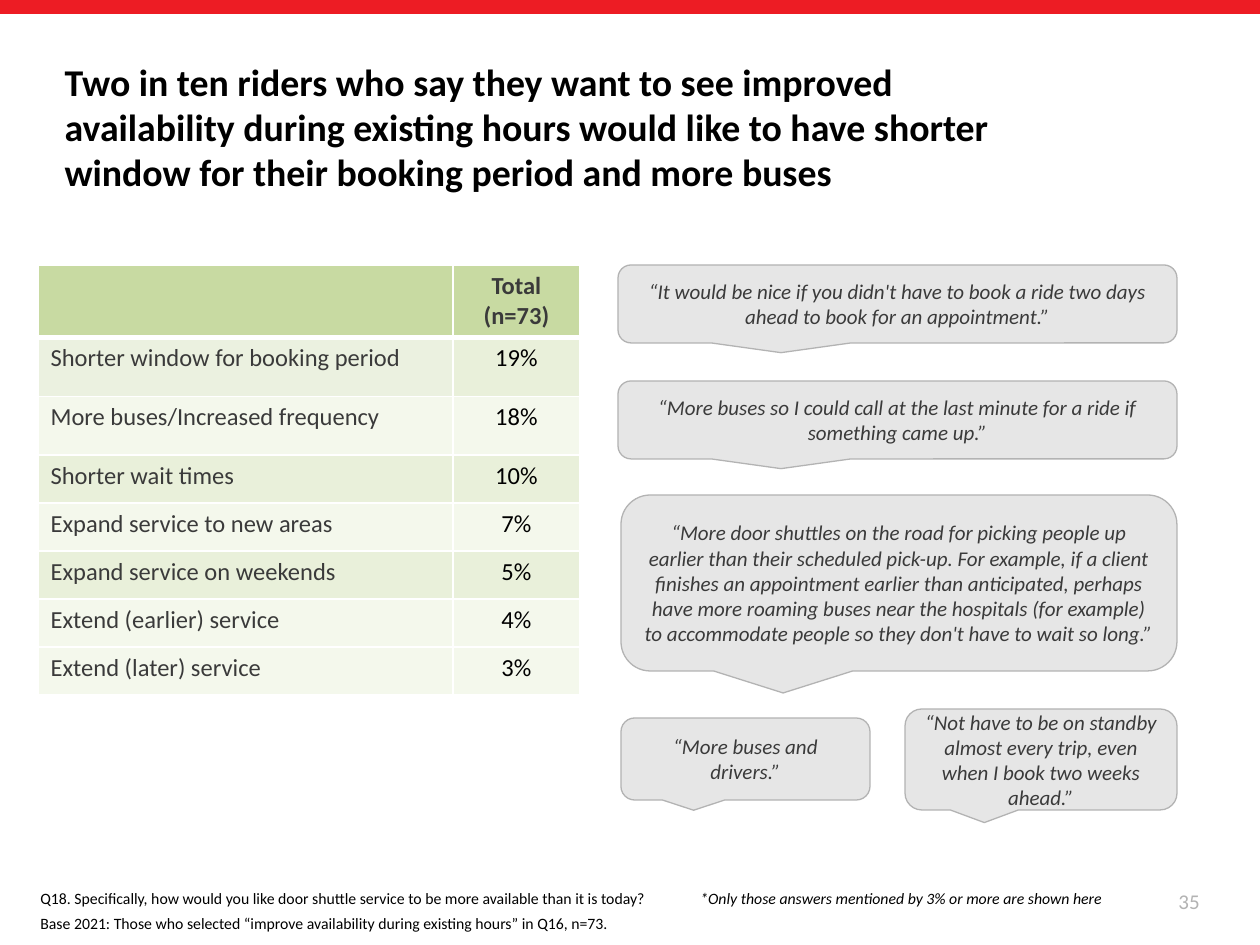
from lxml import etree
from pptx import Presentation
from pptx.dml.color import RGBColor
from pptx.enum.shapes import MSO_SHAPE
from pptx.enum.text import MSO_ANCHOR, MSO_AUTO_SIZE, PP_ALIGN
from pptx.oxml import parse_xml
from pptx.oxml.ns import nsdecls
from pptx.util import Emu, Pt


def px(*values):
    """Turn pixels (126 to the inch) into EMU lengths."""
    return [Emu(round(v * 914400 / 126)) for v in values]


def style(p, size, color, align=PP_ALIGN.LEFT, bold=False, italic=False):
    p.alignment = align
    p.font.name = "Calibri"
    p.font.size = Pt(size)
    p.font.bold = bold
    p.font.italic = italic
    p.font.color.rgb = RGBColor.from_string(color)


prs = Presentation()
prs.slide_width, prs.slide_height = px(1260, 945)
s = prs.slides.add_slide(prs.slide_layouts[5])

# Red band
band = s.shapes.add_shape(MSO_SHAPE.RECTANGLE, *px(0, 0, 1260, 14))
band.shadow.inherit = False
band.fill.solid()
band.fill.fore_color.rgb = RGBColor.from_string("ED1C24")
band.line.fill.background()

# Title
title = s.shapes.title
title.left, title.top, title.width, title.height = px(52, 79, 998, 95)
tf = title.text_frame
tf.text = ("Two in ten riders who say they want to see improved availability during "
           "existing hours would like to have shorter window for their booking period "
           "and more buses")
tf.word_wrap = True
tf.auto_size = MSO_AUTO_SIZE.NONE
tf.vertical_anchor = MSO_ANCHOR.MIDDLE
style(tf.paragraphs[0], 21.6, "000000", bold=True)

# Table of answers
rows = [
    ("", "Total\n(n=73)"),
    ("Shorter window for booking period", "19%"),
    ("More buses/Increased frequency", "18%"),
    ("Shorter wait times", "10%"),
    ("Expand service to new areas", "7%"),
    ("Expand service on weekends", "5%"),
    ("Extend (earlier) service", "4%"),
    ("Extend (later) service", "3%"),
]
heights = [72, 59, 59] + [48] * 5
table = s.shapes.add_table(len(rows), 2, *px(38, 265, 542, sum(heights))).table
for column, width in zip(table.columns, px(415, 127)):
    column.width = width
for i, (row, height) in enumerate(zip(rows, px(*heights))):
    table.rows[i].height = height
    for j, text in enumerate(row):
        cell = table.cell(i, j)
        cell.text = text
        cell.fill.solid()
        fill = "C8DAA2" if i == 0 else "F4F8EC" if i % 2 == 0 or i == 7 else "E9F0DA"
        if (i, j) == (1, 0):
            fill = "EBF1E0"
        cell.fill.fore_color.rgb = RGBColor.from_string(fill)
        color = "000000" if i > 0 and j == 1 else "3A3A3A"
        for p in cell.text_frame.paragraphs:
            style(p, 14, color, PP_ALIGN.CENTER if j else PP_ALIGN.LEFT, bold=i == 0)
        tcPr = cell._tc.get_or_add_tcPr()
        for k, side in enumerate("LRTB"):
            heavy = (i, side) in [(0, "B"), (1, "T")]
            tcPr.insert(k, parse_xml(
                f'<a:ln{side} {nsdecls("a")} w="{Pt(3 if heavy else 1)}"><a:solidFill>'
                f'<a:srgbClr val="FFFFFF"/></a:solidFill></a:ln{side}>'))

# Rider quotes
quotes = [
    (618, 265, 559, 78, "“It would be nice if you didn't have to book a ride two days ahead "
     "to book for an appointment.”"),
    (618, 381, 559, 78, "“More buses so I could call at the last minute for a ride if "
     "something came up.”"),
    (621, 495, 556, 176, "“More door shuttles on the road for picking people up earlier than "
     "their scheduled pick-up. For example, if a client finishes an appointment earlier "
     "than anticipated, perhaps have more roaming buses near the hospitals (for example) "
     "to accommodate people so they don't have to wait so long.”"),
    (621, 718, 249, 82, "“More buses and drivers.”"),
    (905, 709, 272, 101, "“Not have to be on standby almost every trip, even when I book "
     "two weeks ahead.”"),
]
for *box, text in quotes:
    sp = s.shapes.add_shape(MSO_SHAPE.ROUNDED_RECTANGULAR_CALLOUT, *px(*box))
    sp.shadow.inherit = False
    sp.fill.solid()
    sp.fill.fore_color.rgb = RGBColor.from_string("E6E6E6")
    sp.line.color.rgb = RGBColor.from_string("B3B3B3")
    sp.line.width = Pt(0.75)
    tf = sp.text_frame
    tf.text = text
    tf.word_wrap = True
    tf.vertical_anchor = MSO_ANCHOR.MIDDLE
    style(tf.paragraphs[0], 12, "3A3A3A", PP_ALIGN.CENTER, italic=True)

# Footnotes and page number
notes = [
    (28, 871, 1066, 54, "Q18. Specifically, how would you like door shuttle service to be more "
     "available than it is today?", 9, "000000", PP_ALIGN.LEFT, False),
    (28, 905, 639, 36, "Base 2021: Those who selected “improve availability during existing "
     "hours” in Q16, n=73.", 9, "000000", PP_ALIGN.LEFT, False),
    (688, 868, 469, 60, "*Only those answers mentioned by 3% or more are shown here",
     9, "000000", PP_ALIGN.LEFT, True),
    (919, 876, 293, 50, "35", 12, "B3B3B3", PP_ALIGN.RIGHT, False),
]
for *box, text, size, color, align, italic in notes:
    tf = s.shapes.add_textbox(*px(*box)).text_frame
    tf.text = text
    tf.word_wrap = True
    tf.vertical_anchor = MSO_ANCHOR.MIDDLE
    style(tf.paragraphs[0], size, color, align, italic=italic)

prs.save("out.pptx")
